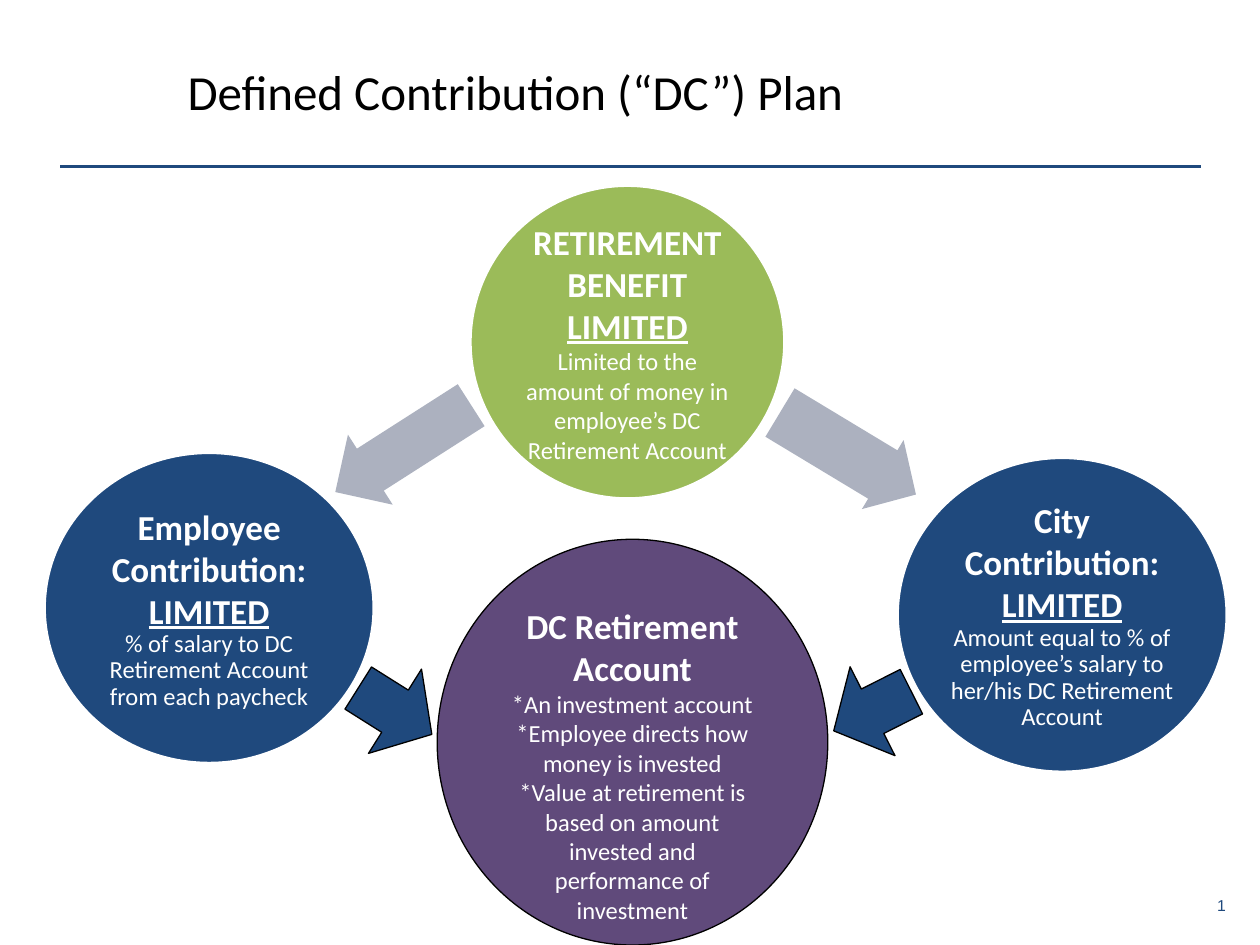
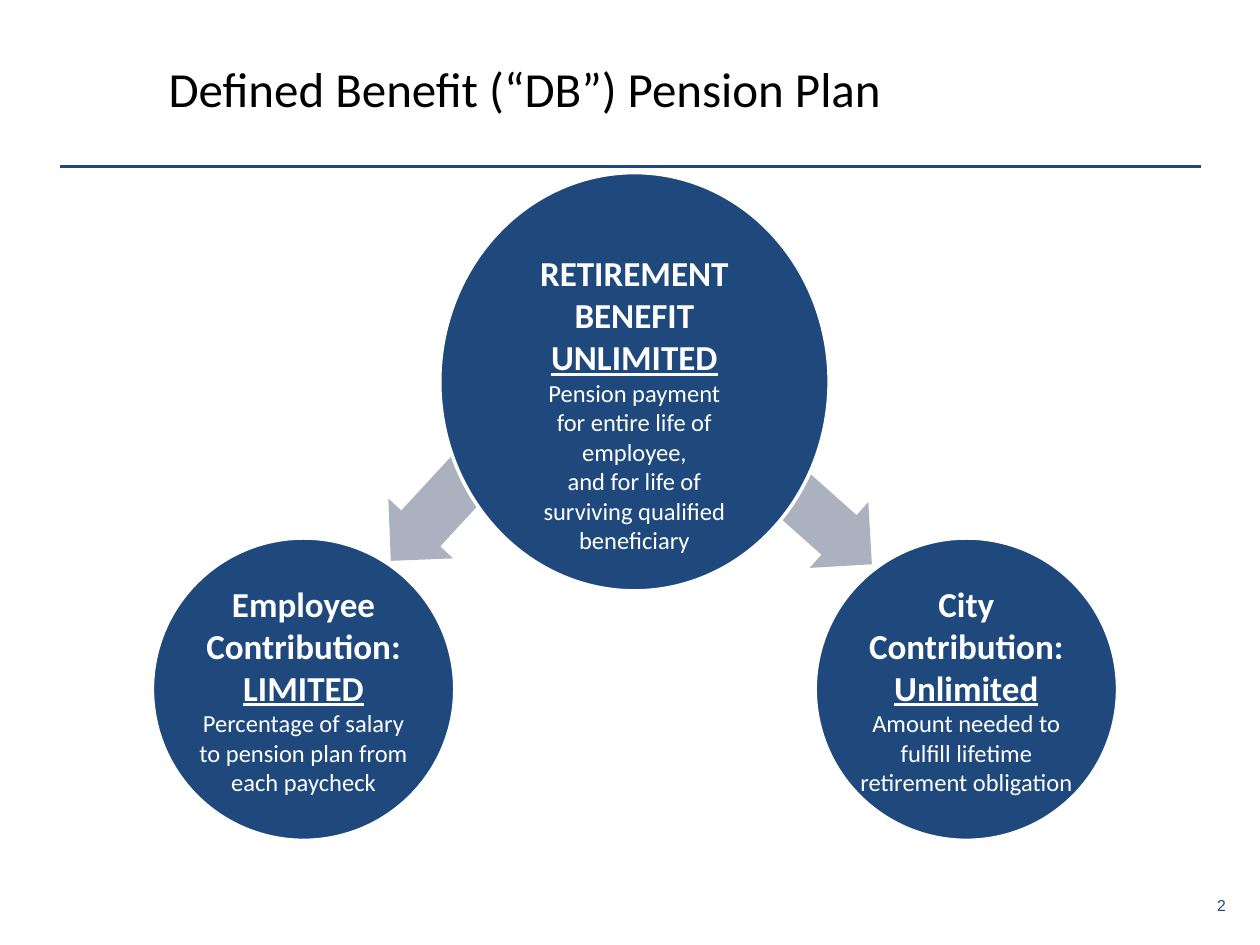
import dataclasses

import lxml.etree
import pptx
import pptx.dml.color
import pptx.enum.shapes
import pptx.enum.text
import pptx.oxml.ns
import pptx.util

Inches = pptx.util.Inches
MIDDLE = pptx.enum.text.MSO_ANCHOR.MIDDLE
TOP = pptx.enum.text.MSO_ANCHOR.TOP
ELLIPSE = pptx.enum.shapes.MSO_SHAPE.OVAL
ARROW = pptx.enum.shapes.MSO_SHAPE.RIGHT_ARROW


@dataclasses.dataclass(frozen=True)
class Theme:
    """Colours, fonts and type sizes shared by the slides."""
    navy: str = "1F497D"
    green: str = "9BBB59"
    purple: str = "604A7B"
    grey: str = "ACB1BF"
    white: str = "FFFFFF"
    black: str = "000000"
    font: str = "Calibri"
    number_font: str = "Arial"
    title_size: int = 28
    heading_size: int = 20
    body_size: int = 14
    number_size: int = 9
    rule_width: float = 1.5
    circle_line: float = 2
    thin_line: float = 0.75


@dataclasses.dataclass(frozen=True)
class Box:
    """A rectangle in inches."""
    left: float
    top: float
    width: float
    height: float

    def inside(self, left, top, width, height):
        """Return a box offset from this one's corner."""
        return Box(self.left + left, self.top + top, width, height)

    def lengths(self):
        """Return the four sides as slide lengths."""
        return [Inches(side) for side in (self.left, self.top, self.width, self.height)]


THEME = Theme()
PAGE = Box(0, 0, 10, 7.5)
DIAGRAM = PAGE.inside(0.35, 1.35, 9.4, 6.15)


def rgb(colour):
    """Turn a hexadecimal string into a colour."""
    return pptx.dml.color.RGBColor.from_string(colour)


def style_font(font, name, size, colour, bold=False, underline=False):
    """Set every font property used on the slides."""
    font.name = name
    font.size = pptx.util.Pt(size)
    font.color.rgb = rgb(colour)
    font.bold = bold
    font.underline = underline


def set_margins(frame, left, top, right, bottom):
    """Set the inner margins of a text frame in inches."""
    frame.margin_left, frame.margin_top = Inches(left), Inches(top)
    frame.margin_right, frame.margin_bottom = Inches(right), Inches(bottom)


def add_label(slide, box, text, margins, wrap, anchor, *font_style):
    """Add a one-paragraph text box."""
    frame = slide.shapes.add_textbox(*box.lengths()).text_frame
    frame.word_wrap = wrap
    frame.vertical_anchor = anchor
    set_margins(frame, *margins)
    frame.text = text
    style_font(frame.paragraphs[0].font, *font_style)


def add_filled(slide, kind, box, fill, line, line_width):
    """Add a flat preset shape, with an outline when a line colour is given."""
    shape = slide.shapes.add_shape(kind, *box.lengths())
    shape.shadow.inherit = False
    shape.fill.solid()
    shape.fill.fore_color.rgb = rgb(fill)
    if line:
        shape.line.color.rgb = rgb(line)
        shape.line.width = pptx.util.Pt(line_width)
    else:
        shape.line.fill.background()
    return shape


def add_circle(slide, box, heading, stress, body, fill=THEME.navy, line=THEME.white,
               line_width=THEME.circle_line, margins=(0, 0, 0, 0), anchor=MIDDLE, spacing=1.0):
    """Add a circle with a bold heading, an underlined word and body text."""
    frame = add_filled(slide, ELLIPSE, box, fill, line, line_width).text_frame
    frame.word_wrap = True
    frame.vertical_anchor = anchor
    set_margins(frame, *margins)
    rows = [(heading, THEME.heading_size, True, False, 1.0)]
    if stress:
        rows.append((stress, THEME.heading_size, True, True, 1.0))
    rows += [(text, THEME.body_size, False, False, spacing) for text in body]
    for index, (text, size, bold, underline, line_spacing) in enumerate(rows):
        paragraph = frame.add_paragraph() if index else frame.paragraphs[0]
        paragraph.text = text
        paragraph.alignment = pptx.enum.text.PP_ALIGN.CENTER
        paragraph.line_spacing = line_spacing
        style_font(paragraph.font, THEME.font, size, THEME.white, bold, underline)


def add_arrow(slide, box, rotation, fill=THEME.grey, line=None, shaft=0.6, head=0.5):
    """Add a block arrow turned clockwise from pointing right."""
    arrow = add_filled(slide, ARROW, box, fill, line, THEME.thin_line)
    arrow.adjustments[0], arrow.adjustments[1] = shaft, head
    arrow.rotation = rotation


def add_page(presentation, title, title_box):
    """Add a slide with its title, rule and page number."""
    slide = presentation.slides.add_slide(presentation.slide_layouts[6])
    add_label(slide, PAGE.inside(9.57, 7.07, 0.33, 0.24), str(len(presentation.slides)),
              (0.09, 0.04, 0.09, 0.04), False, TOP,
              THEME.number_font, THEME.number_size, THEME.navy)
    rule = slide.shapes.add_connector(
        pptx.enum.shapes.MSO_CONNECTOR.STRAIGHT,
        Inches(0.48), Inches(1.32), Inches(9.53), Inches(1.32))
    rule.line.color.rgb = rgb(THEME.navy)
    rule.line.width = pptx.util.Pt(THEME.rule_width)
    lxml.etree.SubElement(rule._element.spPr, pptx.oxml.ns.qn("a:effectLst"))
    add_label(slide, title_box, title, (0.1, 0.05, 0.1, 0.05), True, MIDDLE,
              THEME.font, THEME.title_size, THEME.black)
    return slide


def draw_contribution_plan(slide, box):
    """Draw the four circles and arrows of the DC plan."""
    add_circle(slide, box.inside(3.38, 0.12, 2.5, 2.49), "RETIREMENT BENEFIT", "LIMITED",
               ["Limited to the amount of money in employee’s DC Retirement Account"],
               fill=THEME.green, margins=(0.05, 0.05, 0.05, 0.05))
    add_arrow(slide, box.inside(2.21, 1.88, 1.28, 0.66), 147.4)
    add_arrow(slide, box.inside(5.75, 1.93, 1.26, 0.64), 31.1, shaft=0.7, head=0.48)
    contributors = [
        (0, 2.24, 2.47, "Employee Contribution:",
         "% of salary to DC Retirement Account from each paycheck"),
        (6.77, 2.28, 2.5, "City Contribution:",
         "Amount equal to % of employee’s salary to her/his DC Retirement Account"),
    ]
    for left, top, height, heading, body in contributors:
        add_circle(slide, box.inside(left, top, 2.62, height), heading, "LIMITED", [body],
                   margins=(0.04, 0.03, 0.04, 0.03), spacing=0.9)
    add_circle(slide, box.inside(3.12, 2.93, 3.1, 3.22), "DC Retirement Account", None,
               ["*An investment account *Employee directs how money is invested",
                "*Value at retirement is based on amount invested and performance of investment"],
               fill=THEME.purple, line=THEME.black, line_width=THEME.thin_line,
               margins=(0.1, 0.05, 0.1, 0.05), anchor=TOP)
    for left, rotation in ((2.44, 32.2), (6.23, 153.2)):
        add_arrow(slide, box.inside(left, 3.9, 0.69, 0.79), rotation,
                  fill=THEME.navy, line=THEME.black, shaft=0.5)


def draw_benefit_plan(slide, box):
    """Draw the three circles and arrows of the DB plan."""
    contributors = [
        (0.86, "Employee Contribution:", "LIMITED",
         "Percentage of salary to pension plan from each paycheck"),
        (6.12, "City Contribution:", "Unlimited",
         "Amount needed to fulfill lifetime retirement obligation"),
    ]
    for left, heading, stress, body in contributors:
        add_circle(slide, box.inside(left, 2.92, 2.4, 2.4), heading, stress, [body])
    for left, top, rotation in ((2.51, 2.2, 132.7), (5.26, 2.28, 41.7)):
        add_arrow(slide, box.inside(left, top, 1.5, 0.7), rotation)
    add_circle(slide, box.inside(3.14, 0.02, 3.09, 3.32), "RETIREMENT BENEFIT", "UNLIMITED",
               ["Pension payment for entire life of employee,",
                "and for life of surviving qualified beneficiary"],
               margins=(0.34, 0.53, 0.34, 0.19))


def main():
    """Build and save the presentation."""
    presentation = pptx.Presentation()
    presentation.slide_width = Inches(PAGE.width)
    presentation.slide_height = Inches(PAGE.height)
    pages = [
        ("Defined Contribution (“DC”) Plan", Box(1.39, 0.2, 8.08, 1.04), draw_contribution_plan),
        ("Defined Benefit (“DB”) Pension Plan", Box(1.24, 0.18, 8.06, 1.04), draw_benefit_plan),
    ]
    for title, title_box, draw in pages:
        draw(add_page(presentation, title, title_box), DIAGRAM)
    presentation.save("out.pptx")


if __name__ == "__main__":
    main()
